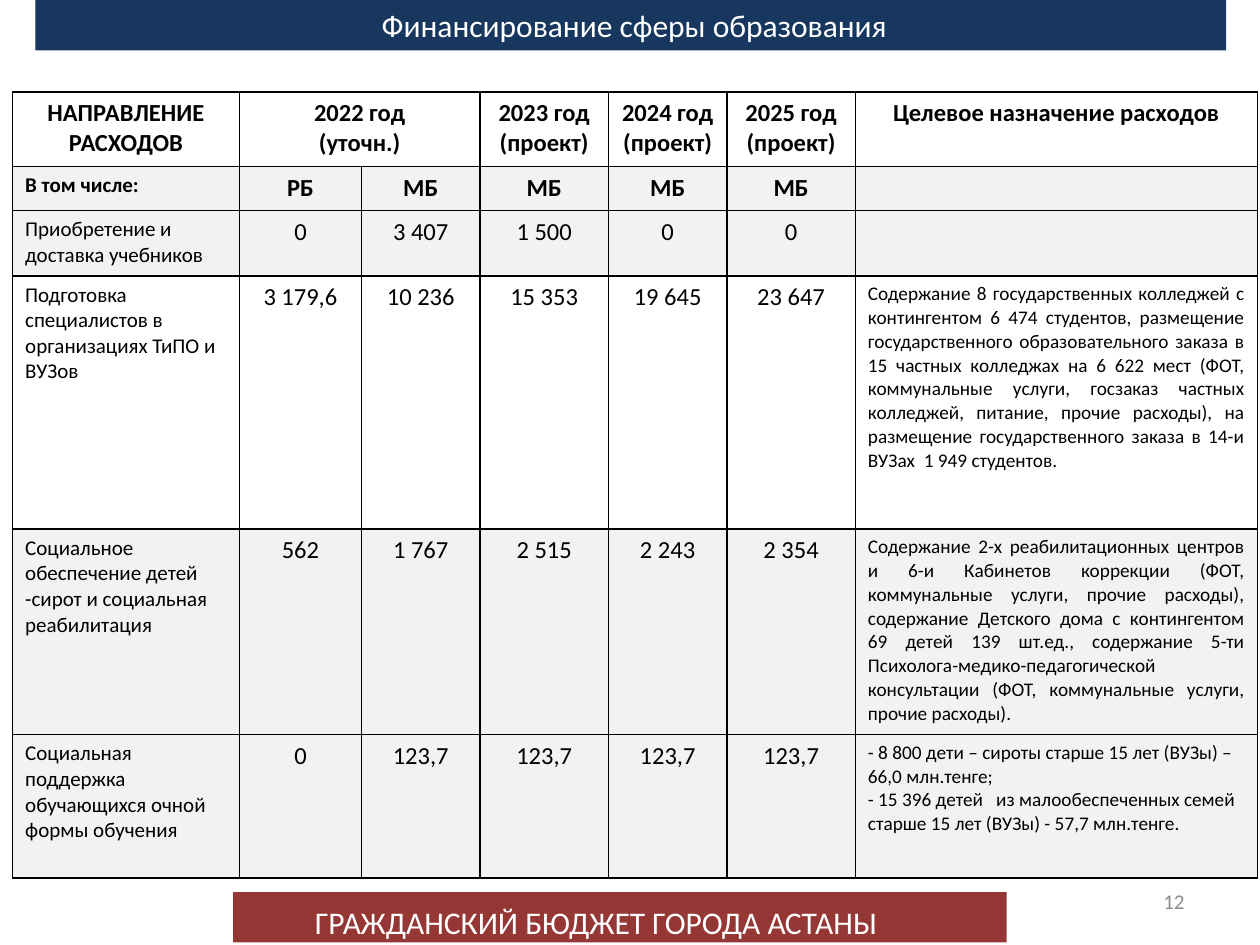
from lxml.etree import SubElement
from pptx import Presentation
from pptx.dml.color import RGBColor
from pptx.enum.shapes import MSO_SHAPE
from pptx.enum.text import MSO_ANCHOR, PP_ALIGN
from pptx.oxml.ns import qn
from pptx.util import Pt

NAVY = RGBColor(0x17, 0x37, 0x5E)
BRICK = RGBColor(0x95, 0x37, 0x35)
WHITE = RGBColor(0xFF, 0xFF, 0xFF)
BLACK = RGBColor(0, 0, 0)
LIGHT = RGBColor(0xF2, 0xF2, 0xF2)
GREY = RGBColor(0x8C, 0x8C, 0x8C)

COL_WIDTHS = [129.6, 69.8, 67.7, 73.4, 67.7, 73.4, 229.7]
ROW_HEIGHTS = [42.5, 25.2, 37.4, 144.7, 117.4, 82.1]
SHADED_ROWS = {1, 2, 4, 5}
LAST_COL = len(COL_WIDTHS) - 1

ROWS = [
    ["НАПРАВЛЕНИЕ РАСХОДОВ", "2022 год\n(уточн.)", "", "2023 год (проект)",
     "2024 год (проект)", "2025 год\n(проект)", "Целевое назначение расходов"],
    ["В том числе:", "РБ", "МБ", "МБ", "МБ", "МБ", ""],
    ["Приобретение и доставка учебников", "0", "3 407", "1 500", "0", "0", ""],
    ["Подготовка специалистов в организациях ТиПО и ВУЗов",
     "3 179,6", "10 236", "15 353", "19 645", "23 647",
     "Содержание 8 государственных колледжей с контингентом 6 474 студентов, "
     "размещение государственного образовательного заказа в 15 частных колледжах "
     "на 6 622 мест (ФОТ, коммунальные услуги, госзаказ частных колледжей, питание, "
     "прочие расходы), на размещение государственного заказа в 14-и ВУЗах  "
     "1 949 студентов."],
    ["Социальное обеспечение детей -сирот и социальная  реабилитация",
     "562", "1 767", "2 515", "2 243", "2 354",
     "Содержание 2-х реабилитационных центров и 6-и Кабинетов коррекции (ФОТ, "
     "коммунальные услуги, прочие расходы), содержание Детского дома с контингентом "
     "69 детей 139 шт.ед., содержание 5-ти Психолога-медико-педагогической "
     "консультации (ФОТ, коммунальные услуги, прочие расходы)."],
    ["Социальная поддержка обучающихся очной формы обучения",
     "0", "123,7", "123,7", "123,7", "123,7",
     "- 8 800 дети – сироты старше 15 лет (ВУЗы) – 66,0 млн.тенге;\n"
     "- 15 396 детей   из малообеспеченных семей старше 15 лет (ВУЗы) - "
     "57,7 млн.тенге."],
]


def write(tf, text, align, color, **fmt):
    """Fill a text frame, one paragraph per line of text."""
    tf.word_wrap = True
    for i, line in enumerate(text.split("\n")):
        p = tf.paragraphs[0] if i == 0 else tf.add_paragraph()
        p.alignment = align
        r = p.add_run()
        r.text = line
        r.font.color.rgb = color
        for name, value in {"name": "Calibri", "bold": False, **fmt}.items():
            setattr(r.font, name, value)


def add_band(slide, left, top, width, height, color):
    sp = slide.shapes.add_shape(MSO_SHAPE.RECTANGLE, Pt(left), Pt(top), Pt(width), Pt(height))
    sp.shadow.inherit = False
    sp.fill.solid()
    sp.fill.fore_color.rgb = color
    sp.line.fill.background()


def add_label(slide, left, top, width, height, text, align, color, size, anchor):
    sp = slide.shapes.add_textbox(Pt(left), Pt(top), Pt(width), Pt(height))
    sp.text_frame.vertical_anchor = anchor
    write(sp.text_frame, text, align, color, size=Pt(size))


def place_title(slide, text):
    sp = slide.shapes.title
    for name, value in {"left": 73.4, "top": 0, "width": 578.2, "height": 28.8}.items():
        setattr(sp, name, Pt(value))
    sp.text_frame.vertical_anchor = MSO_ANCHOR.TOP
    write(sp.text_frame, text, PP_ALIGN.CENTER, WHITE, size=Pt(18))
    slide.shapes._spTree.append(sp._element)  # bring in front of its band


def border_cell(cell):
    tcPr = cell._tc.get_or_add_tcPr()
    for i, side in enumerate(("a:lnL", "a:lnR", "a:lnT", "a:lnB")):
        ln = tcPr.makeelement(qn(side), {"w": str(Pt(1))})
        fill = SubElement(ln, qn("a:solidFill"))
        SubElement(fill, qn("a:srgbClr"), {"val": str(BLACK)})
        tcPr.insert(i, ln)


def cell_style(row, col, text):
    """Return alignment, size and weight by the cell's place in the table."""
    if row == 0:
        return PP_ALIGN.CENTER, 14, True
    if col == 0:
        return PP_ALIGN.LEFT, 12, row == 1
    if col == LAST_COL:
        return PP_ALIGN.LEFT if "\n" in text else PP_ALIGN.JUSTIFY, 11, False
    return PP_ALIGN.CENTER, 14, row == 1


def add_budget_table(slide):
    frame = slide.shapes.add_table(len(ROWS), len(COL_WIDTHS), Pt(7.2), Pt(52.6),
                                   Pt(sum(COL_WIDTHS)), Pt(sum(ROW_HEIGHTS)))
    table = frame.table
    for col, width in zip(table.columns, COL_WIDTHS):
        col.width = Pt(width)
    for row, height in zip(table.rows, ROW_HEIGHTS):
        row.height = Pt(height)
    table.cell(0, 1).merge(table.cell(0, 2))

    for i, texts in enumerate(ROWS):
        for j, text in enumerate(texts):
            cell = table.cell(i, j)
            if i in SHADED_ROWS:
                cell.fill.solid()
                cell.fill.fore_color.rgb = LIGHT
            else:
                cell.fill.background()
            border_cell(cell)
            align, size, bold = cell_style(i, j, text)
            if text:
                write(cell.text_frame, text, align, BLACK, size=Pt(size), bold=bold)
            else:
                # keep an empty cell from stretching its row
                end = SubElement(cell.text_frame.paragraphs[0]._p, qn("a:endParaRPr"))
                end.set("sz", str(size * 100))


def main():
    prs = Presentation()
    prs.slide_width, prs.slide_height = Pt(720), Pt(540)
    slide = prs.slides.add_slide(prs.slide_layouts[5])

    # Footer band
    add_band(slide, 133.2, 509.8, 442.1, 28.8, BRICK)
    add_label(slide, 172.8, 512.6, 380.2, 28.8, "ГРАЖДАНСКИЙ БЮДЖЕТ ГОРОДА АСТАНЫ",
              PP_ALIGN.JUSTIFY, WHITE, 18, MSO_ANCHOR.TOP)

    # Title band
    add_band(slide, 20.2, 0, 680.4, 28.8, NAVY)
    place_title(slide, "Финансирование сферы образования")

    # Budget table and page number
    add_budget_table(slide)
    add_label(slide, 516.2, 500.4, 167.8, 28.8, "12",
              PP_ALIGN.RIGHT, GREY, 12, MSO_ANCHOR.MIDDLE)

    prs.save("out.pptx")


if __name__ == "__main__":
    main()
